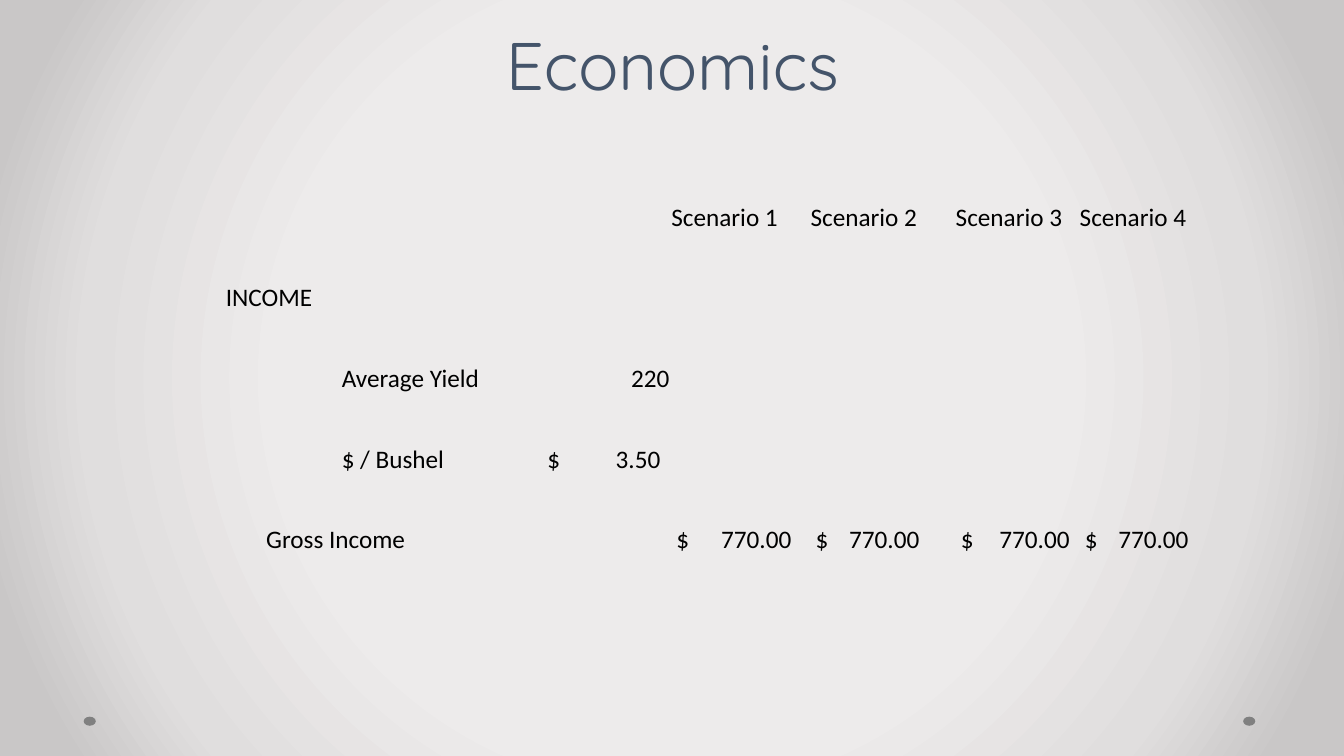
"""Build the Economics slide with its income scenario table."""
from pptx import Presentation
from pptx import util as u
from pptx.dml.color import RGBColor
from pptx.enum import shapes, text
from pptx.oxml import parse_xml
from pptx.oxml.ns import nsdecls, qn
from lxml import etree

COLORS = {"title": "44546A", "body": "000000", "dot": "808080"}
BACKGROUND_STOPS = [(50, "EDEBEB"), (76, "E0DEDE"), (92, "C9C7C7")]
TITLE = "Economics"
DOT_LEFTS = [0.83, 12.33]
COLUMN_WIDTHS = [0.4, 0.35, 0.4, 1.99, 1.28, 1.38, 1.44, 1.23, 1.17]
ROW_HEIGHT = 0.8
ROWS = [
    {5: "Scenario 1", 6: "Scenario 2", 7: "Scenario 3", 8: "Scenario 4"},
    {0: "INCOME"},
    {3: "Average Yield", 4: "220"},
    {3: "$ / Bushel", 4: "$\t3.50"},
    {1: "Gross Income", 5: "$\t770.00", 6: "$\t770.00", 7: "$\t770.00", 8: "$\t770.00"},
]
MERGES = [(1, 0, 2), (4, 1, 3)]
AMOUNT_ENDS = {4: 1.12, 5: 1.14, 6: 1.03, 7: 1.08, 8: 1.03}
PLAIN_TABLE_STYLE = "{2D5ABB26-0587-4C30-8999-92F81FD0307C}"


def add_run(paragraph, words, size, font, color):
    run = paragraph.add_run()
    run.text = words
    run.font.size = u.Pt(size)
    run.font.name = font
    run.font.color.rgb = RGBColor.from_string(COLORS[color])


def set_background(slide):
    stops = "".join(
        f'<a:gs pos="{position * 1000}"><a:srgbClr val="{color}"/></a:gs>'
        for position, color in BACKGROUND_STOPS
    )
    background = parse_xml(
        f'<p:bg {nsdecls("p", "a")}><p:bgPr><a:gradFill rotWithShape="1">'
        f'<a:gsLst>{stops}</a:gsLst><a:path path="circle">'
        '<a:fillToRect l="50000" t="50000" r="50000" b="50000"/></a:path>'
        "</a:gradFill><a:effectLst/></p:bgPr></p:bg>"
    )
    slide.element.cSld.insert(0, background)


def add_dots(slide):
    for left in DOT_LEFTS:
        dot = slide.shapes.add_shape(
            shapes.MSO_SHAPE.OVAL, u.Inches(left), u.Inches(7.11), u.Inches(0.12), u.Inches(0.09)
        )
        dot.shadow.inherit = False
        dot.fill.solid()
        dot.fill.fore_color.rgb = RGBColor.from_string(COLORS["dot"])
        dot.line.fill.background()


def add_title(slide):
    box = slide.shapes.add_textbox(u.Inches(0.67), 0, u.Inches(12), u.Inches(1.08))
    frame = box.text_frame
    frame.word_wrap = True
    frame.vertical_anchor = text.MSO_ANCHOR.BOTTOM
    paragraph = frame.paragraphs[0]
    paragraph.alignment = text.PP_ALIGN.CENTER
    paragraph.line_spacing = u.Pt(48)
    add_run(paragraph, TITLE, 48, "Quicksand", "title")


def add_right_tab(paragraph, position):
    properties = paragraph._p.get_or_add_pPr()
    tabs = etree.SubElement(properties, qn("a:tabLst"))
    etree.SubElement(tabs, qn("a:tab"), pos=str(u.Inches(position)), algn="r")


def fill_cell(cell, words, column):
    cell.vertical_anchor = text.MSO_ANCHOR.BOTTOM
    is_amount = "\t" in words
    cell.margin_left = u.Inches(0.06 if is_amount else 0.01)
    cell.margin_right = cell.margin_top = u.Inches(0.01)
    cell.margin_bottom = 0
    paragraph = cell.text_frame.paragraphs[0]
    if is_amount:
        add_right_tab(paragraph, AMOUNT_ENDS[column])
    elif words.isdigit():
        paragraph.alignment = text.PP_ALIGN.RIGHT
    add_run(paragraph, words, 18, "Calibri", "body")


def add_income_table(slide):
    frame = slide.shapes.add_table(
        len(ROWS), len(COLUMN_WIDTHS), u.Inches(2.23), u.Inches(1.51),
        u.Inches(sum(COLUMN_WIDTHS)), u.Inches(ROW_HEIGHT * len(ROWS)),
    )
    table = frame.table
    table.first_row = table.horz_banding = False
    table._tbl.tblPr.find(qn("a:tableStyleId")).text = PLAIN_TABLE_STYLE
    for column, width in zip(table.columns, COLUMN_WIDTHS):
        column.width = u.Inches(width)
    for row in table.rows:
        row.height = u.Inches(ROW_HEIGHT)
    for cell in table.iter_cells():
        cell.fill.background()
    for row, first, last in MERGES:
        table.cell(row, first).merge(table.cell(row, last))
    for row, entries in enumerate(ROWS):
        for column, words in entries.items():
            fill_cell(table.cell(row, column), words, column)


def main():
    presentation = Presentation()
    presentation.slide_width = u.Inches(13.33)
    presentation.slide_height = u.Inches(7.5)
    slide = presentation.slides.add_slide(presentation.slide_layouts[6])
    set_background(slide)
    add_dots(slide)
    add_title(slide)
    add_income_table(slide)
    presentation.save("out.pptx")


if __name__ == "__main__":
    main()
